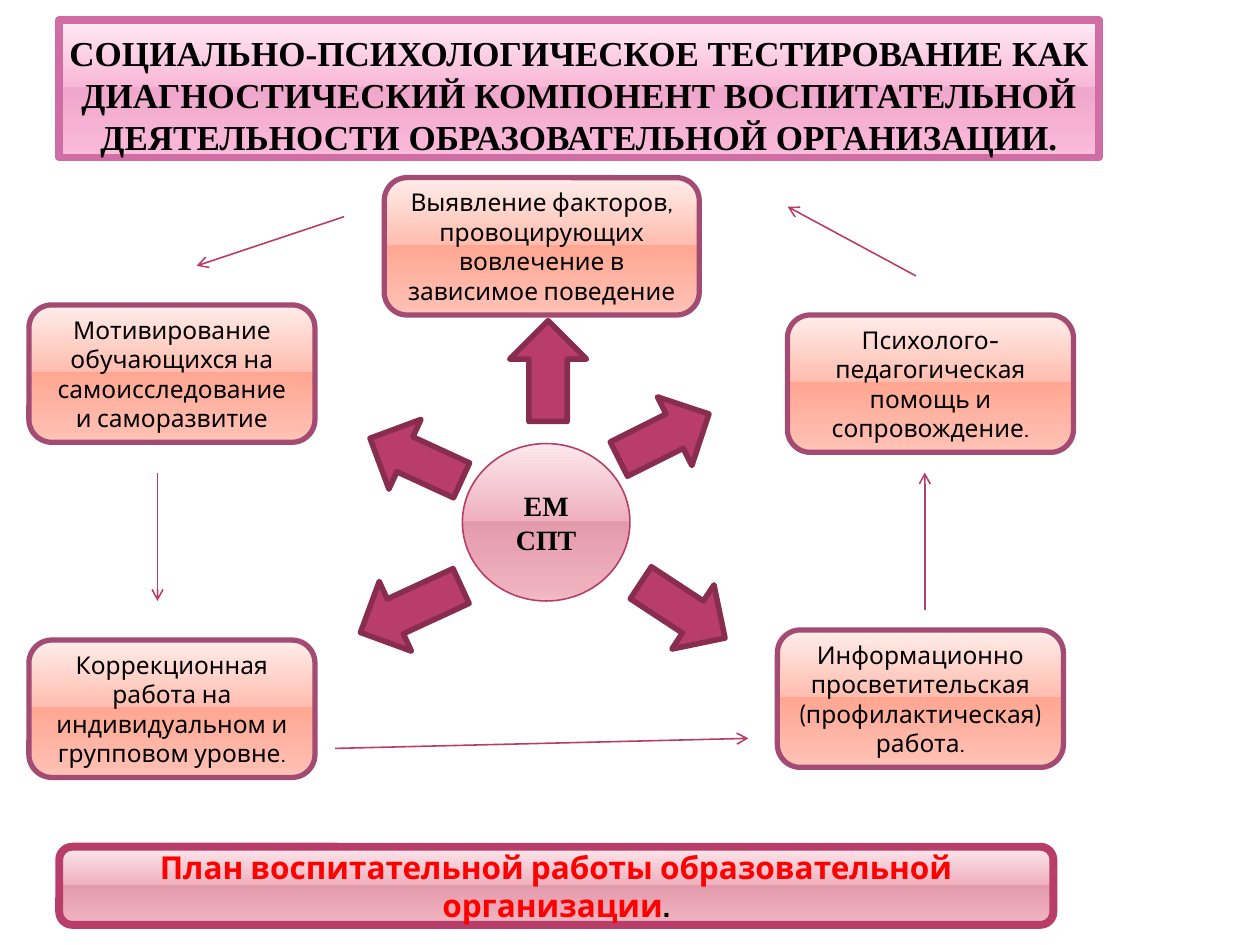
"""Build the slide on socio-psychological testing in education."""
from typing import NamedTuple

from lxml.etree import SubElement
from pptx import Presentation
from pptx.dml.color import RGBColor
from pptx.enum.shapes import MSO_CONNECTOR as Link, MSO_SHAPE as Kind
from pptx.enum.text import MSO_ANCHOR as Anchor, MSO_AUTO_SIZE as Auto, PP_ALIGN as Align
from pptx.oxml.ns import qn
from pptx.util import Inches, Pt

BLACK = RGBColor(0x00, 0x00, 0x00)
RED = RGBColor(0xFF, 0x00, 0x00)
BERRY = RGBColor(0xB8, 0x3D, 0x68)
WINE = RGBColor(0x88, 0x2D, 0x4D)
PLUM = RGBColor(0xA3, 0x4B, 0x73)
ORCHID = RGBColor(0xCF, 0x6D, 0xA4)
PINK = [RGBColor(0xFF, 0xEA, 0xF4), RGBColor(0xF9, 0xB7, 0xD7), RGBColor(0xEF, 0xA7, 0xCB),
        RGBColor(0xF9, 0xB7, 0xD7), RGBColor(0xF8, 0xC4, 0xDD)]
ROSE = [RGBColor(0xFC, 0xE8, 0xED), RGBColor(0xEF, 0xB0, 0xBE), RGBColor(0xE3, 0x9B, 0xAC),
        RGBColor(0xEF, 0xB0, 0xBE), RGBColor(0xF0, 0xBE, 0xC9)]
PEACH = [RGBColor(0xFF, 0xED, 0xEA), RGBColor(0xFF, 0xBD, 0xAF), RGBColor(0xFF, 0xA7, 0x93),
         RGBColor(0xFF, 0xBD, 0xAF), RGBColor(0xFF, 0xC8, 0xBC)]
STOPS = (0, 49, 49, 92, 100)
SERIF, SANS = "Times New Roman", "Cabin"


class Box(NamedTuple):
    left: float
    top: float
    text: str
    width: float = 2.27


class Arrow(NamedTuple):
    left: float
    top: float
    turn: float
    width: float = 0.8


class Line(NamedTuple):
    x1: float
    y1: float
    x2: float
    y2: float


BOXES = [
    Box(6.25, 2.5, "Психолого- педагогическая помощь и сопровождение."),
    Box(3.05, 1.41, "Выявление факторов, провоцирующих вовлечение в зависимое поведение", 2.5),
    Box(6.17, 5, "Информационно просветительская (профилактическая) работа."),
    Box(0.23, 5.08, "Коррекционная работа на индивидуальном и групповом уровне."),
    Box(0.23, 2.42, "Мотивирование обучающихся на самоисследование и саморазвитие"),
]
ARROWS = [Arrow(4.87, 3.16, 333.4), Arrow(3.95, 2.64, 270), Arrow(5.02, 4.54, 33.3),
          Arrow(2.82, 4.53, 155.2, 0.88), Arrow(2.9, 3.34, 204.7)]
LINES = [Line(2.73, 1.72, 1.56, 2.11), Line(1.25, 3.75, 1.25, 4.77),
         Line(2.66, 5.94, 5.94, 5.86), Line(7.34, 4.84, 7.34, 3.75),
         Line(7.27, 2.19, 6.25, 1.64)]


def apply(item, form: dict) -> None:
    for key, value in form.items():
        setattr(item, key, value)


def paint(shape, tones: list, edge: RGBColor, weight: float) -> None:
    shape.shadow.inherit = False
    shape.fill.gradient()
    shape.fill.gradient_angle = 270
    stops = next(shape.element.iter(qn("a:gsLst")))
    stops[:] = []
    for pos, tone in zip(STOPS, tones):
        stop = SubElement(stops, qn("a:gs"), pos=str(pos * 1000))
        SubElement(stop, qn("a:srgbClr"), val=str(tone))
    outline(shape, edge, weight)


def outline(shape, color: RGBColor, weight: float) -> None:
    shape.line.color.rgb = color
    shape.line.width = Pt(weight)


def write(shape, runs: list, font: dict, frame: dict) -> None:
    apply(shape.text_frame, {"word_wrap": True, "auto_size": Auto.NONE, **frame})
    para = shape.text_frame.paragraphs[0]
    para.alignment = Align.CENTER
    for text, color in runs:
        run = para.add_run()
        run.text = text
        apply(run.font, font)
        run.font.color.rgb = color


def add(slide, kind: Kind, left: float, top: float, width: float, height: float):
    return slide.shapes.add_shape(kind, *map(Inches, (left, top, width, height)))


def panel(slide, kind: Kind, place: tuple, look: tuple, runs: list, font: dict) -> None:
    shape = add(slide, kind, *place)
    paint(shape, *look)
    write(shape, runs, font, {"vertical_anchor": Anchor.MIDDLE})


def point(slide, arrow: Arrow) -> None:
    shape = add(slide, Kind.RIGHT_ARROW, arrow.left, arrow.top, arrow.width, 0.61)
    shape.rotation = arrow.turn
    shape.shadow.inherit = False
    shape.fill.solid()
    shape.fill.fore_color.rgb = BERRY
    outline(shape, WINE, 3.15)


def link(slide, line: Line) -> None:
    wire = slide.shapes.add_connector(Link.STRAIGHT, *map(Inches, line))
    outline(wire, BERRY, 0.9)
    SubElement(wire.line._get_or_add_ln(), qn("a:tailEnd"), type="arrow")
    SubElement(wire.element.spPr, qn("a:effectLst"))


def head(slide) -> None:
    title = slide.shapes.title
    apply(title, {"left": Inches(0.47), "top": Inches(0.16),
                  "width": Inches(8.25), "height": Inches(1.09)})
    paint(title, PINK, ORCHID, 4.5)
    text = ("СОЦИАЛЬНО-ПСИХОЛОГИЧЕСКОЕ ТЕСТИРОВАНИЕ КАК ДИАГНОСТИЧЕСКИЙ КОМПОНЕНТ "
            "ВОСПИТАТЕЛЬНОЙ ДЕЯТЕЛЬНОСТИ ОБРАЗОВАТЕЛЬНОЙ ОРГАНИЗАЦИИ.")
    write(title, [(text, BLACK)], {"name": SERIF, "size": Pt(20), "bold": True},
          {"vertical_anchor": Anchor.BOTTOM, "margin_left": Inches(0.05),
           "margin_right": Inches(0.05), "margin_top": 0, "margin_bottom": 0})


def main() -> None:
    deck = Presentation()
    apply(deck, {"slide_width": Inches(10), "slide_height": Inches(7.5)})
    slide = deck.slides.add_slide(deck.slide_layouts[5])
    head(slide)
    panel(slide, Kind.OVAL, (3.67, 3.52, 1.33, 1.25), (ROSE, BERRY, 0.9),
          [("ЕМ СПТ", BLACK)], {"name": SERIF, "size": Pt(16), "bold": True})
    for arrow in ARROWS:
        point(slide, arrow)
    for box in BOXES:
        panel(slide, Kind.ROUNDED_RECTANGLE, (box.left, box.top, box.width, 1.09),
              (PEACH, PLUM, 3), [(box.text, BLACK)], {"name": SANS, "size": Pt(14)})
    for line in LINES:
        link(slide, line)
    panel(slide, Kind.ROUNDED_RECTANGLE, (0.47, 6.72, 7.89, 0.62), (ROSE, BERRY, 4.5),
          [("План воспитательной работы образовательной организации", RED), (".", BLACK)],
          {"name": SANS, "size": Pt(18), "bold": True})
    deck.save("out.pptx")


if __name__ == "__main__":
    main()
